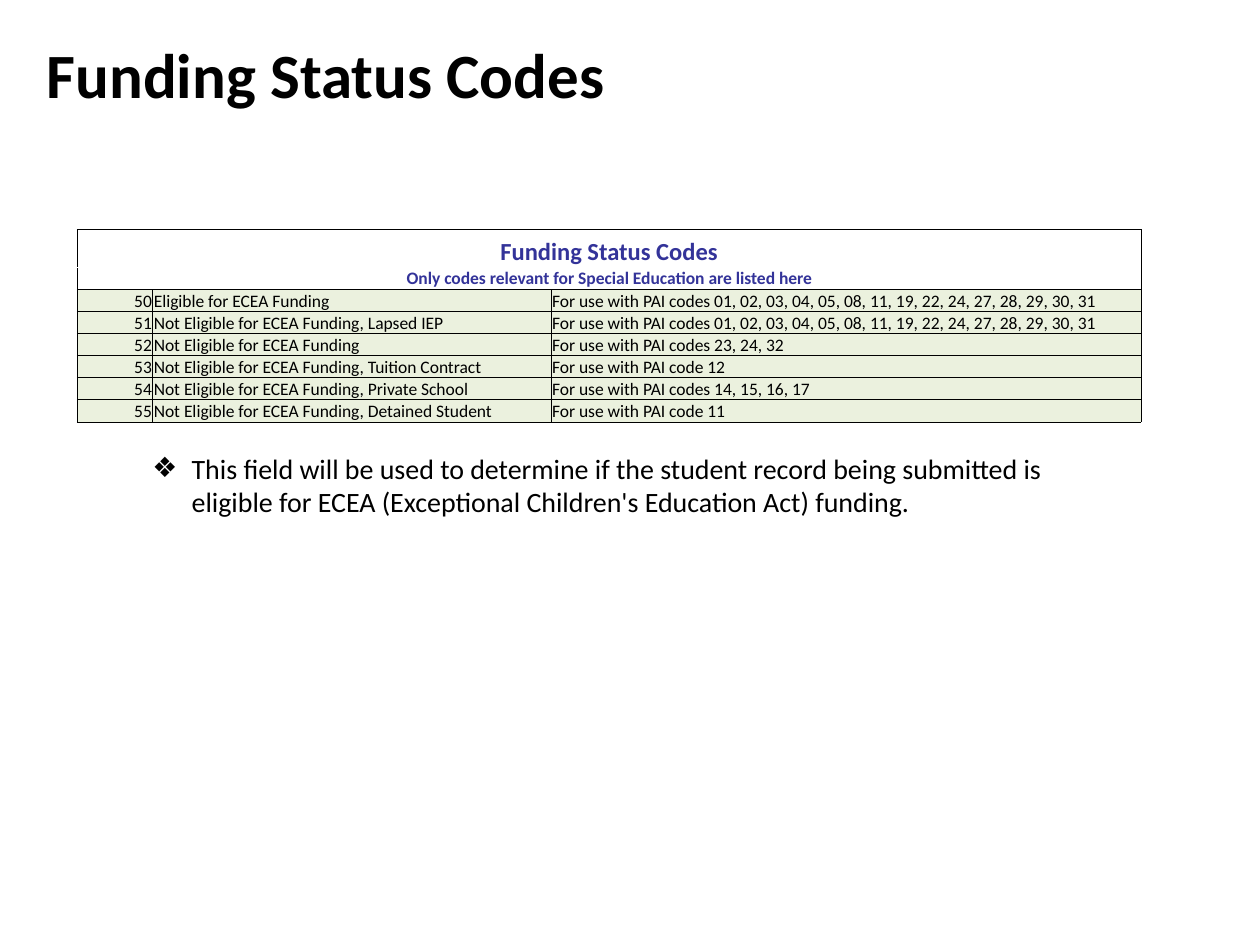
import pptx
import pptx.dml.color
import pptx.enum.text
import pptx.oxml
import pptx.oxml.ns
import pptx.util
from dataclasses import dataclass

Cm = pptx.util.Cm
Pt = pptx.util.Pt
RGBColor = pptx.dml.color.RGBColor
PP_ALIGN = pptx.enum.text.PP_ALIGN
MSO_ANCHOR = pptx.enum.text.MSO_ANCHOR
MSO_AUTO_SIZE = pptx.enum.text.MSO_AUTO_SIZE


@dataclass(frozen=True)
class Theme:
    font: str = "Calibri"
    text: str = "000000"
    heading: str = "333399"
    row_fill: str = "EBF1DE"
    border: str = "000000"
    border_width: float = 0.5
    title_size: int = 36
    body_size: int = 16
    heading_size: int = 14
    table_size: int = 10


theme = Theme()


def format_paragraph(paragraph, size, color, bold=False, alignment=PP_ALIGN.LEFT):
    paragraph.alignment = alignment
    paragraph.font.name = theme.font
    paragraph.font.size = Pt(size)
    paragraph.font.bold = bold
    paragraph.font.color.rgb = RGBColor.from_string(color)


def format_cell(cell, sides, anchor):
    cell.margin_left = cell.margin_right = cell.margin_top = Cm(0.02)
    cell.margin_bottom = 0
    cell.vertical_anchor = anchor
    properties = cell._tc.get_or_add_tcPr()
    for side in sides:
        properties.append(pptx.oxml.parse_xml(
            f'<a:ln{side} {pptx.oxml.ns.nsdecls("a")} w="{Pt(theme.border_width)}">'
            f'<a:solidFill><a:srgbClr val="{theme.border}"/></a:solidFill></a:ln{side}>'))


presentation = pptx.Presentation()
presentation.slide_width = Cm(25.4)
presentation.slide_height = Cm(19.05)
slide = presentation.slides.add_slide(presentation.slide_layouts[1])

# Title
title = slide.shapes.title
title.left, title.top, title.width, title.height = Cm(0.69), Cm(0.58), Cm(20.04), Cm(1.8)
title.text_frame.text = "Funding Status Codes"
title.text_frame.vertical_anchor = MSO_ANCHOR.TOP
title.text_frame.auto_size = MSO_AUTO_SIZE.SHAPE_TO_FIT_TEXT
format_paragraph(title.text_frame.paragraphs[0], theme.title_size, theme.text, bold=True)

# Table of codes
headings = [
    ("Funding Status Codes", theme.heading_size, "LRT"),
    ("Only codes relevant for Special Education are listed here", theme.table_size, "LRB"),
]
common_codes = "codes 01, 02, 03, 04, 05, 08, 11, 19, 22, 24, 27, 28, 29, 30, 31"
codes = [
    ("50", "Eligible for ECEA Funding", common_codes),
    ("51", "Not Eligible for ECEA Funding, Lapsed IEP", common_codes),
    ("52", "Not Eligible for ECEA Funding", "codes 23, 24, 32"),
    ("53", "Not Eligible for ECEA Funding, Tuition Contract", "code 12"),
    ("54", "Not Eligible for ECEA Funding, Private School", "codes 14, 15, 16, 17"),
    ("55", "Not Eligible for ECEA Funding, Detained Student", "code 11"),
]
column_widths = [Cm(1.52), Cm(8.03), Cm(11.89)]
row_heights = [Cm(0.76)] + [Cm(0.44)] * (len(headings) + len(codes) - 1)
table = slide.shapes.add_table(
    len(row_heights), len(column_widths), Cm(1.56), Cm(4.63),
    sum(column_widths), sum(row_heights)).table
table.first_row = table.horz_banding = False
for column, width in zip(table.columns, column_widths):
    column.width = width
for row, height in zip(table.rows, row_heights):
    row.height = height

# Heading rows span all columns
for row_index, (heading, size, sides) in enumerate(headings):
    cells = list(table.rows[row_index].cells)
    cells[0].merge(cells[-1])
    cells[0].text = heading
    format_paragraph(cells[0].text_frame.paragraphs[0], size, theme.heading,
                     bold=True, alignment=PP_ALIGN.CENTER)
    for cell in cells:
        format_cell(cell, sides, MSO_ANCHOR.BOTTOM)
        cell.fill.background()

# Code rows
for row_index, (code, meaning, usage) in enumerate(codes, start=len(headings)):
    values = (code, meaning, f"For use with PAI {usage}")
    for column_index, value in enumerate(values):
        cell = table.cell(row_index, column_index)
        cell.text = value
        alignment = PP_ALIGN.RIGHT if column_index == 0 else PP_ALIGN.LEFT
        format_paragraph(cell.text_frame.paragraphs[0], theme.table_size, theme.text,
                         alignment=alignment)
        format_cell(cell, "LRTB", MSO_ANCHOR.MIDDLE)
        cell.fill.solid()
        cell.fill.fore_color.rgb = RGBColor.from_string(theme.row_fill)

# Bulleted explanation
body = slide.placeholders[1]
body.left, body.top, body.width, body.height = Cm(2.82), Cm(8.97), Cm(19.81), Cm(1.63)
body.text_frame.text = (
    "This field will be used to determine if the student record being submitted is "
    "eligible for ECEA (Exceptional Children's Education Act) funding.")
body.text_frame.auto_size = MSO_AUTO_SIZE.SHAPE_TO_FIT_TEXT
paragraph = body.text_frame.paragraphs[0]
paragraph.space_before = Pt(0)
paragraph_properties = paragraph._p.get_or_add_pPr()
paragraph_properties.set("marL", str(Cm(0.79)))
paragraph_properties.set("indent", str(-Cm(0.79)))
paragraph_properties.append(pptx.oxml.parse_xml(
    f'<a:buChar {pptx.oxml.ns.nsdecls("a")} char="❖"/>'))
format_paragraph(paragraph, theme.body_size, theme.text)

presentation.save("out.pptx")
